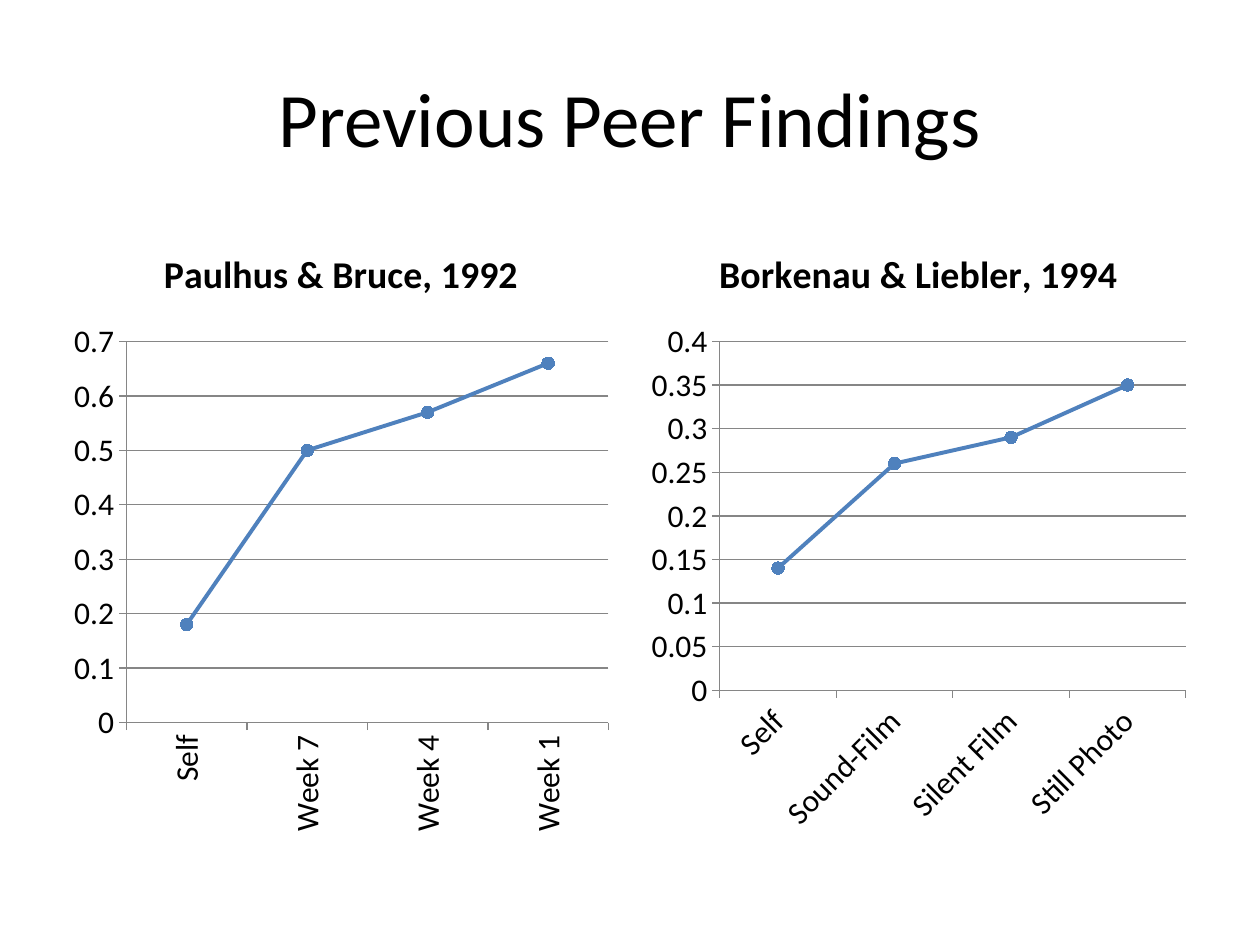
from dataclasses import dataclass

from pptx import Presentation
from pptx.chart.data import CategoryChartData
from pptx.dml.color import RGBColor
from pptx.enum.chart import XL_CHART_TYPE, XL_MARKER_STYLE, XL_TICK_MARK
from pptx.enum.text import MSO_ANCHOR, PP_ALIGN
from pptx.util import Cm, Pt

LINE_MARKERS = XL_CHART_TYPE.LINE_MARKERS
CIRCLE = XL_MARKER_STYLE.CIRCLE
OUTSIDE = XL_TICK_MARK.OUTSIDE
MIDDLE = MSO_ANCHOR.MIDDLE
CENTER = PP_ALIGN.CENTER

FONT = "Calibri"
BLACK = "000000"
BLUE = "4F81BD"
GRAY = "868686"

MARGIN = 1.27
PAGE_WIDTH = 25.4
CHART_TOP = 4.45
CHART_WIDTH = 11.22
CHART_HEIGHT = 12.57
DEGREE = 60000


@dataclass(frozen=True)
class Study:
    title: str
    left: float
    label_angle: int
    correlations: dict[str, float]


STUDIES = [
    Study("Paulhus & Bruce, 1992", MARGIN, -90,
          {"Self": 0.18, "Week 7": 0.5, "Week 4": 0.57, "Week 1": 0.66}),
    Study("Borkenau & Liebler, 1994", PAGE_WIDTH - MARGIN - CHART_WIDTH, -45,
          {"Self": 0.14, "Sound-Film": 0.26, "Silent Film": 0.29, "Still Photo": 0.35}),
]


def color(value: str) -> RGBColor:
    return RGBColor.from_string(value)


def format_font(font, size: float, bold: bool = False) -> None:
    for name, value in {"name": FONT, "size": Pt(size), "bold": bold}.items():
        setattr(font, name, value)
    font.color.rgb = color(BLACK)


def format_line(line, value: str, width: float) -> None:
    line.color.rgb = color(value)
    line.width = Pt(width)


def add_title(page, text: str) -> None:
    box = page.shapes.add_textbox(
        Cm(MARGIN), Cm(0.76), Cm(PAGE_WIDTH - 2 * MARGIN), Cm(3.18))
    frame = box.text_frame
    frame.word_wrap = True
    frame.vertical_anchor = MIDDLE
    para = frame.paragraphs[0]
    para.alignment = CENTER
    span = para.add_run()
    span.text = text
    format_font(span.font, 44)


def add_study_chart(page, study: Study) -> None:
    data = CategoryChartData()
    data.categories = list(study.correlations)
    data.add_series("Series 1", list(study.correlations.values()))
    chart = page.shapes.add_chart(
        LINE_MARKERS, Cm(study.left), Cm(CHART_TOP),
        Cm(CHART_WIDTH), Cm(CHART_HEIGHT), data).chart
    format_font(chart.font, 18)
    chart.has_legend = False

    # Chart title
    chart.has_title = True
    chart.chart_title.include_in_layout = False
    para = chart.chart_title.text_frame.paragraphs[0]
    span = para.add_run()
    span.text = study.title
    format_font(span.font, 21.6, bold=True)

    # Axes
    for axis in (chart.category_axis, chart.value_axis):
        axis.major_tick_mark = OUTSIDE
        format_line(axis.format.line, GRAY, 0.75)
        format_font(axis.tick_labels.font, 18)
    label_body = chart.category_axis._element.txPr.bodyPr
    label_body.set("rot", str(study.label_angle * DEGREE))
    label_body.set("vert", "horz")
    chart.value_axis.has_major_gridlines = True
    format_line(chart.value_axis.major_gridlines.format.line, GRAY, 0.75)

    # Line and markers
    plot = chart.plots[0]
    plot.vary_by_categories = False
    series = plot.series[0]
    series.smooth = False
    format_line(series.format.line, BLUE, 2.25)
    marker = series.marker
    marker.style = CIRCLE
    marker.size = 7
    marker.format.fill.solid()
    marker.format.fill.fore_color.rgb = color(BLUE)
    marker.format.line.fill.background()


def main() -> None:
    deck = Presentation()
    deck.slide_width, deck.slide_height = Cm(PAGE_WIDTH), Cm(19.05)
    page = deck.slides.add_slide(deck.slide_layouts[6])
    add_title(page, "Previous Peer Findings")
    for study in STUDIES:
        add_study_chart(page, study)
    deck.save("out.pptx")


if __name__ == "__main__":
    main()
